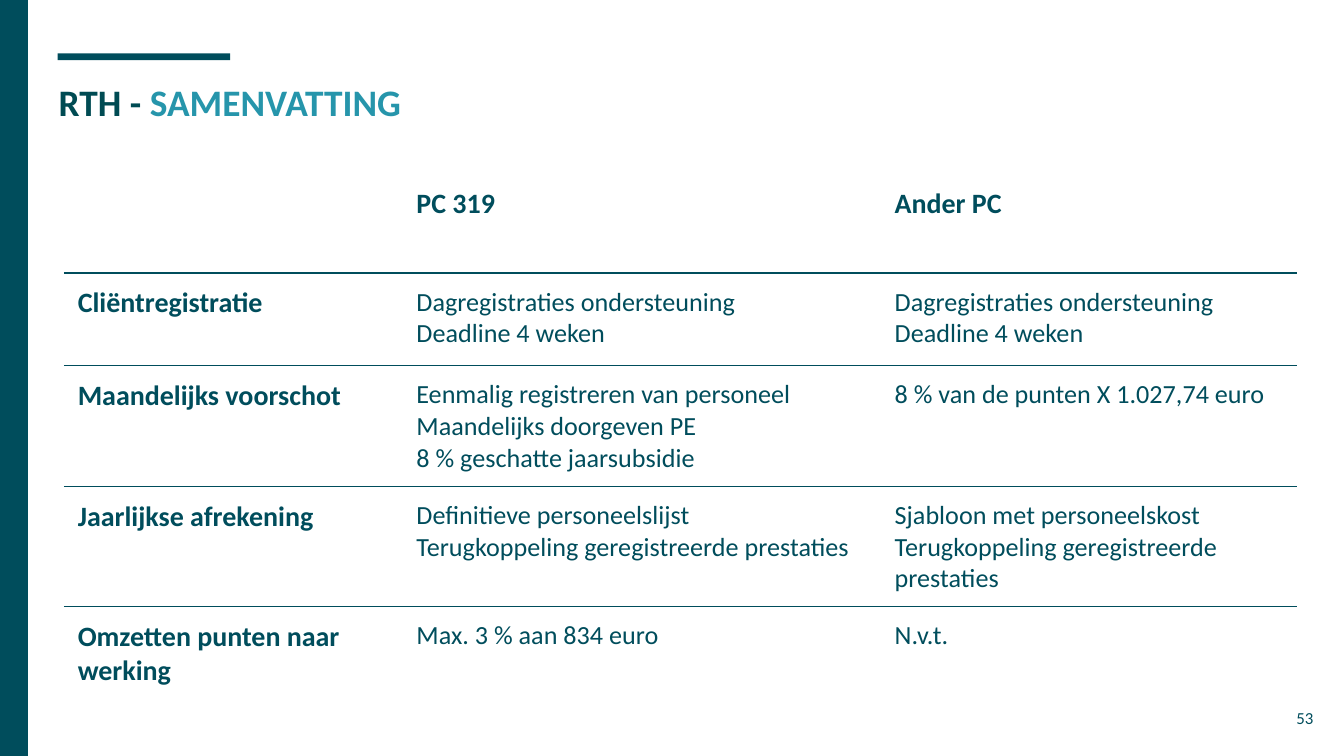
from dataclasses import dataclass

from lxml.etree import SubElement as Sub
from pptx import Presentation
from pptx.dml.color import RGBColor as Rgb
from pptx.enum.shapes import MSO_SHAPE as Kind
from pptx.enum.text import MSO_ANCHOR as Anchor, PP_ALIGN as Align
from pptx.oxml.ns import qn
from pptx.util import Cm, Pt


@dataclass(frozen=True)
class Theme:
    font: str = "Calibri"
    dark: str = "004D5C"
    head: str = "004B53"
    light: str = "2695AB"
    white: str = "FFFFFF"
    title: int = 20
    label: int = 15
    body: int = 14
    small: int = 9
    rule: float = 0.75
    inset: float = 0.25


T = Theme()

ROWS = [
    ("", "PC 319", "Ander PC"),
    ("Cliëntregistratie",
     "Dagregistraties ondersteuning\nDeadline 4 weken",
     "Dagregistraties ondersteuning\nDeadline 4 weken"),
    ("Maandelijks voorschot",
     "Eenmalig registreren van personeel\nMaandelijks doorgeven PE\n"
     "8 % geschatte jaarsubsidie",
     "8 % van de punten X 1.027,74 euro"),
    ("Jaarlijkse afrekening",
     "Definitieve personeelslijst\nTerugkoppeling geregistreerde prestaties",
     "Sjabloon met personeelskost\nTerugkoppeling geregistreerde prestaties"),
    ("Omzetten punten naar werking", "Max. 3 % aan 834 euro", "N.v.t."),
]


def style(run, size, color, bold=False):
    font = run.font
    font.name, font.size, font.bold = T.font, Pt(size), bold
    font.color.rgb = Rgb.from_string(color)


def pad(part):
    part.margin_left = part.margin_right = Cm(T.inset)
    part.margin_top = part.margin_bottom = Cm(T.inset)
    part.vertical_anchor = Anchor.TOP


def add_bar(slide, box):
    bar = slide.shapes.add_shape(Kind.RECTANGLE, *map(Cm, box))
    bar.shadow.inherit = False
    bar.fill.solid()
    bar.fill.fore_color.rgb = Rgb.from_string(T.dark)
    bar.line.fill.background()


def add_text(slide, box, runs, size, bold=False, align=Align.LEFT):
    frame = slide.shapes.add_textbox(*map(Cm, box)).text_frame
    frame.word_wrap = True
    pad(frame)
    para = frame.paragraphs[0]
    para.alignment = align
    for text, color in runs:
        run = para.add_run()
        run.text = text
        style(run, size, color, bold)


def set_edges(cell, top, bottom):
    props = cell._tc.get_or_add_tcPr()
    for side, color in zip("LRTB", (T.white, T.white, top, bottom)):
        line = Sub(props, qn(f"a:ln{side}"), w=str(Pt(T.rule)))
        fill = Sub(line, qn("a:solidFill"))
        Sub(fill, qn("a:srgbClr"), val=color)


def add_grid(slide, box, widths, heights):
    last = len(ROWS) - 1
    grid = slide.shapes.add_table(len(ROWS), len(widths), *map(Cm, box)).table
    for col, width in zip(grid.columns, widths):
        col.width = Cm(width)
    for i, (row, height) in enumerate(zip(grid.rows, heights)):
        row.height = Cm(height)
        for j, cell in enumerate(row.cells):
            # Dark rules between rows only
            set_edges(cell, T.dark if i else T.white,
                      T.dark if i < last else T.white)
            cell.fill.solid()
            cell.fill.fore_color.rgb = Rgb.from_string(T.white)
            pad(cell)
            # Header row and first column are bold
            bold = i == 0 or j == 0
            cell.text_frame.text = ROWS[i][j]
            for para in cell.text_frame.paragraphs:
                for run in para.runs:
                    style(run, T.label if bold else T.body, T.dark, bold)


def main():
    deck = Presentation()
    deck.slide_width, deck.slide_height = Cm(25.4), Cm(14.29)
    slide = deck.slides.add_slide(deck.slide_layouts[6])

    # Side band and accent bar
    add_bar(slide, (1.09, 1.01, 3.26, 0.13))
    add_bar(slide, (0, 0, 0.53, 14.29))

    # Title and page number
    add_text(slide, (0.86, 1.25, 23.67, 1.6),
             [("RTH - ", T.head), ("SAMENVATTING", T.light)], T.title, True)
    add_text(slide, (23.55, 13.18, 1.52, 1.09), [("53", T.dark)],
             T.small, align=Align.RIGHT)

    # Summary table
    add_grid(slide, (1.22, 3.28, 23.29, 8.89), (6.4, 9.04, 7.85),
             [1.88] + [1.75] * 4)

    deck.save("out.pptx")


if __name__ == "__main__":
    main()
